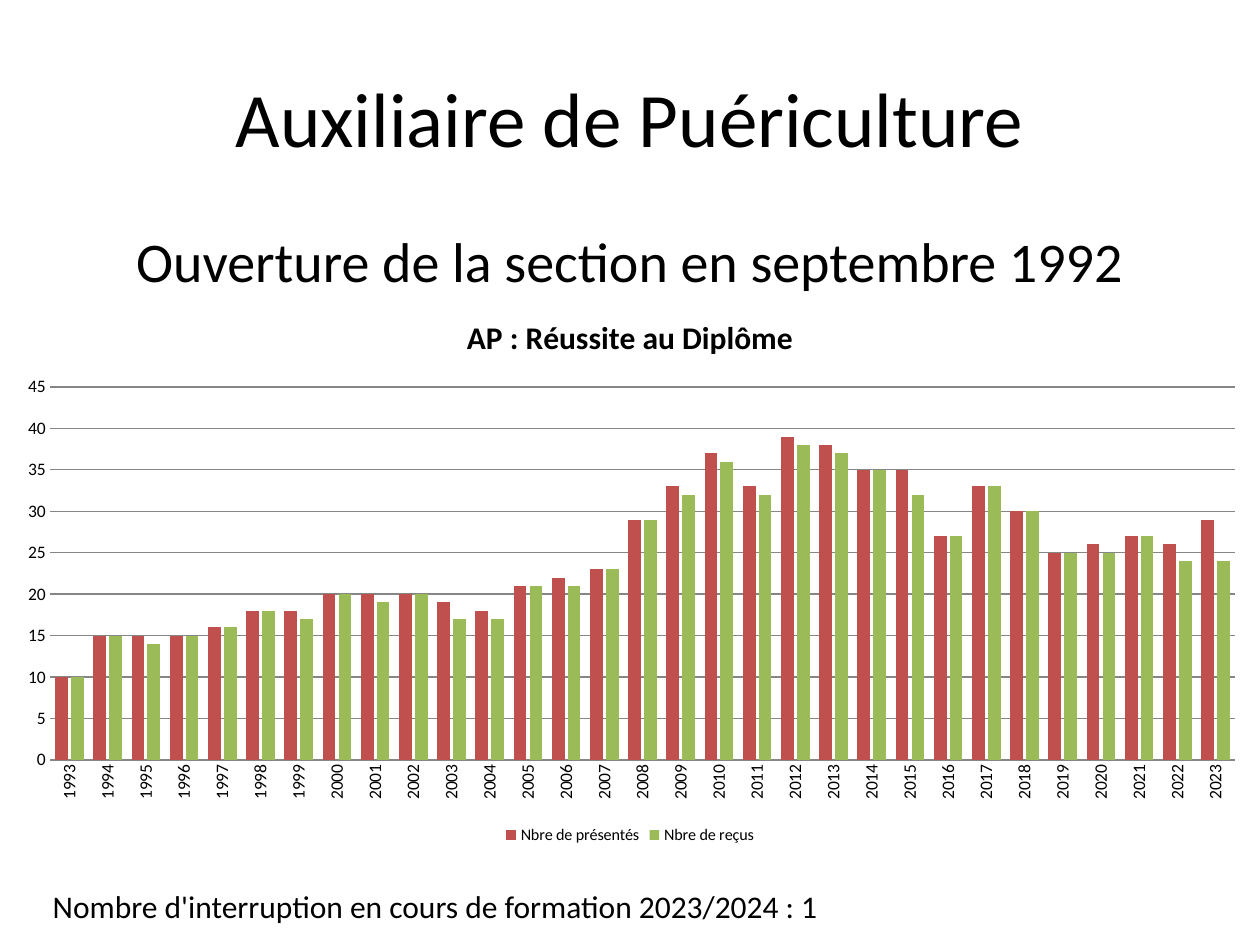
"""Build the slide on the Auxiliaire de Puériculture diploma results."""
from lxml.etree import SubElement
from pptx import Presentation
from pptx.chart.data import CategoryChartData
from pptx.dml.color import RGBColor
from pptx.enum.chart import XL_CHART_TYPE, XL_LEGEND_POSITION, XL_TICK_MARK
from pptx.enum.text import MSO_ANCHOR, PP_ALIGN
from pptx.oxml.ns import qn
from pptx.util import Inches, Pt


def color(value):
    """Return the colour for a hex string."""
    return RGBColor.from_string(value)


def format_font(font, size, bold=False):
    """Apply the slide's black Calibri at the given size."""
    values = {"name": "Calibri", "size": Pt(size), "bold": bold}
    for attribute, value in values.items():
        setattr(font, attribute, value)
    font.color.rgb = color("000000")


presentation = Presentation()
presentation.slide_width = Inches(10)
presentation.slide_height = Inches(7.5)
slide = presentation.slides.add_slide(presentation.slide_layouts[5])

title = slide.shapes.title
subtitle = slide.shapes.add_textbox(Inches(0.5), Inches(1.75), Inches(9), Inches(0.65))
interruptions = slide.shapes.add_textbox(Inches(0.32), Inches(6.99), Inches(6.45), Inches(0.4))
title.left, title.top, title.width, title.height = map(Inches, (0.5, 0.3, 9, 1.25))

texts = [
    (title, "Auxiliaire de Puériculture", 44, PP_ALIGN.CENTER, MSO_ANCHOR.MIDDLE),
    (subtitle, "Ouverture de la section en septembre 1992", 32, PP_ALIGN.CENTER, MSO_ANCHOR.TOP),
    (interruptions, "Nombre d'interruption en cours de formation 2023/2024 : 1", 18,
     PP_ALIGN.LEFT, MSO_ANCHOR.TOP),
]
for shape, text, size, alignment, anchor in texts:
    frame = shape.text_frame
    frame.word_wrap = True
    frame.vertical_anchor = anchor
    paragraph = frame.paragraphs[0]
    paragraph.text = text
    paragraph.alignment = alignment
    format_font(paragraph.runs[0].font, size)

series_values = {
    "Nbre de présentés": [10, 15, 15, 15, 16, 18, 18, 20, 20, 20, 19, 18, 21, 22, 23, 29,
                          33, 37, 33, 39, 38, 35, 35, 27, 33, 30, 25, 26, 27, 26, 29],
    "Nbre de reçus": [10, 15, 14, 15, 16, 18, 17, 20, 19, 20, 17, 17, 21, 21, 23, 29,
                      32, 36, 32, 38, 37, 35, 32, 27, 33, 30, 25, 25, 27, 24, 24],
}
chart_data = CategoryChartData()
chart_data.categories = [str(year) for year in range(1993, 2024)]
for name, values in series_values.items():
    chart_data.add_series(name, values)
chart = slide.shapes.add_chart(
    XL_CHART_TYPE.COLUMN_CLUSTERED, Inches(0), Inches(2.32), Inches(10), Inches(4.42), chart_data
).chart
format_font(chart.font, 10)

chart.has_title = True
chart_title = chart.chart_title
chart_title.include_in_layout = False
chart_title.text_frame.text = "AP : Réussite au Diplôme"
format_font(chart_title.text_frame.paragraphs[0].runs[0].font, 18, bold=True)

chart.has_legend = True
chart.legend.position = XL_LEGEND_POSITION.BOTTOM
chart.legend.include_in_layout = False
format_font(chart.legend.font, 9.2)

plot = chart.plots[0]
for attribute, value in {"gap_width": 75, "overlap": -25, "vary_by_categories": False}.items():
    setattr(plot, attribute, value)
for series, fill in zip(plot.series, ("C0504D", "9BBB59")):
    series.format.fill.solid()
    series.format.fill.fore_color.rgb = color(fill)

for axis in (chart.category_axis, chart.value_axis):
    axis.major_tick_mark = axis.minor_tick_mark = XL_TICK_MARK.NONE
    format_font(axis.tick_labels.font, 10)
chart.category_axis.format.line.color.rgb = color("868686")
chart.category_axis._element.find(qn("c:txPr")).find(qn("a:bodyPr")).set("rot", "-5400000")

value_axis = chart.value_axis
value_axis.minimum_scale, value_axis.maximum_scale, value_axis.major_unit = 0, 45, 5
value_axis.format.line.fill.background()
value_axis.has_major_gridlines = True
value_axis.major_gridlines.format.line.color.rgb = color("868686")

plot_area = chart._chartSpace.chart.plotArea
layout = plot_area.find(qn("c:layout"))
if layout is None:
    layout = SubElement(plot_area, qn("c:layout"))
    plot_area.insert(0, layout)
manual_layout = SubElement(layout, qn("c:manualLayout"))
layout_values = {"layoutTarget": "inner", "xMode": "edge", "yMode": "edge",
                 "x": 0.04, "y": 0.17, "w": 0.94, "h": 0.67}
for tag, value in layout_values.items():
    SubElement(manual_layout, qn(f"c:{tag}")).set("val", str(value))

presentation.save("out.pptx")
